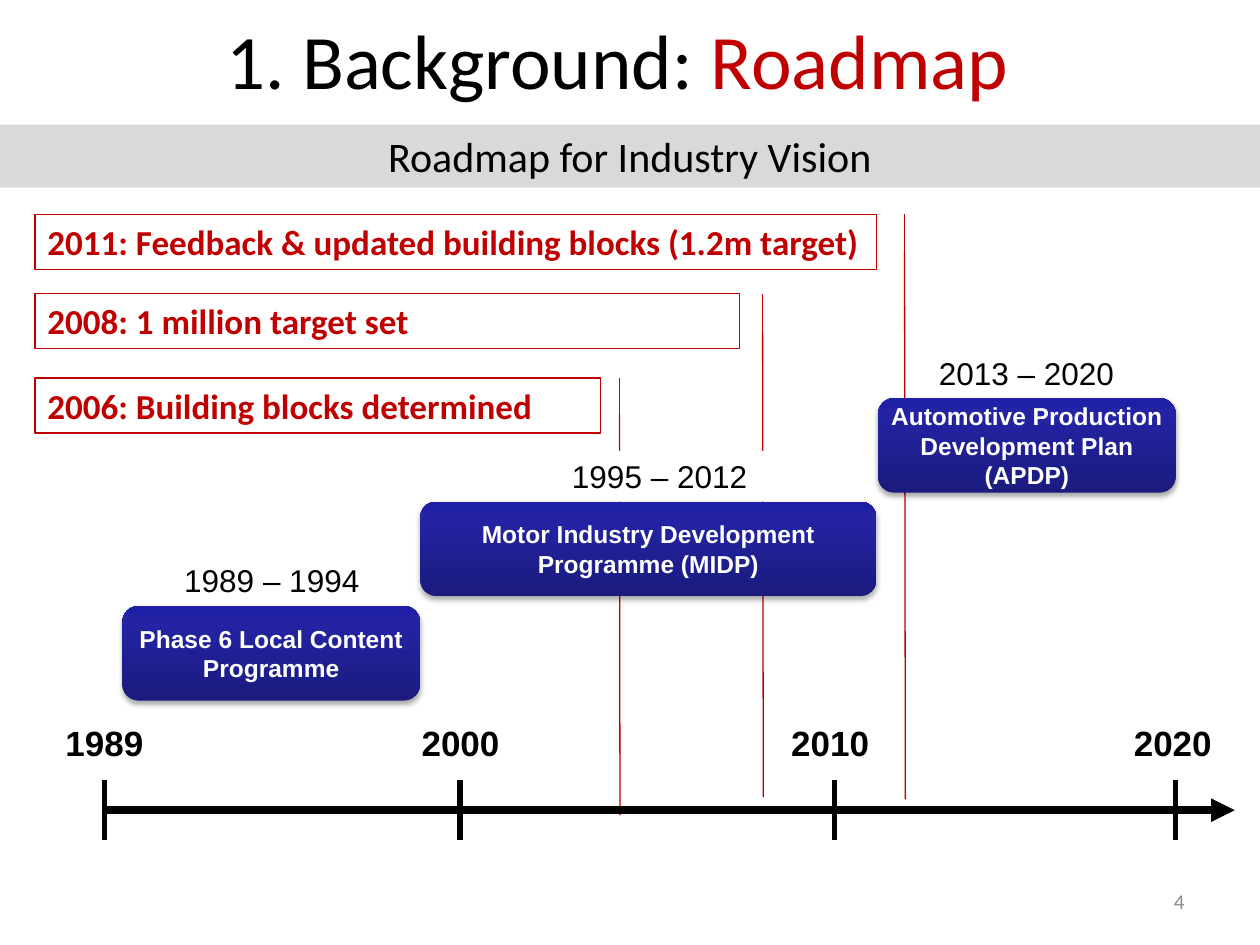
from copy import deepcopy

from lxml import etree
from pptx import Presentation
from pptx.dml.color import RGBColor
from pptx.enum import shapes, text
from pptx.oxml.ns import qn
from pptx.util import Pt

BLACK = RGBColor(0x00, 0x00, 0x00)
WHITE = RGBColor(0xFF, 0xFF, 0xFF)
RED = RGBColor(0xC0, 0x00, 0x00)
BAND = RGBColor(0xD9, 0xD9, 0xD9)
PAGE_GREY = RGBColor(0x8C, 0x8C, 0x8C)
BLUES = [(0, RGBColor(0x1B, 0x1B, 0x7E)), (0.8, RGBColor(0x23, 0x23, 0xA3)),
         (1, RGBColor(0x20, 0x20, 0xA6))]

SHAPE = shapes.MSO_SHAPE
LEFT, CENTER, RIGHT = text.PP_ALIGN.LEFT, text.PP_ALIGN.CENTER, text.PP_ALIGN.RIGHT
TOP, MIDDLE = text.MSO_ANCHOR.TOP, text.MSO_ANCHOR.MIDDLE


def write(sp, runs, size, font, align=LEFT, bold=False, anchor=TOP, wrap=True):
    """Fill a shape with one paragraph of (text, colour) runs."""
    tf = sp.text_frame
    tf.word_wrap = wrap
    tf.vertical_anchor = anchor
    p = tf.paragraphs[0]
    p.alignment = align
    for words, color in runs:
        r = p.add_run()
        r.text = words
        r.font.size, r.font.name, r.font.bold = Pt(size), font, bold
        r.font.color.rgb = color


def add_text(s, box, *args, **kwargs):
    write(s.shapes.add_textbox(*map(Pt, box)), *args, **kwargs)


def add_shape(s, kind, box, fill=None, line=None):
    sp = s.shapes.add_shape(kind, *map(Pt, box))
    sp.shadow.inherit = False
    if fill is None:
        sp.fill.background()
    else:
        sp.fill.solid()
        sp.fill.fore_color.rgb = fill
    if line is None:
        sp.line.fill.background()
    else:
        sp.line.color.rgb = line
        sp.line.width = Pt(0.75)
    return sp


def add_line(s, x1, y1, x2, y2, width):
    c = s.shapes.add_connector(shapes.MSO_CONNECTOR.STRAIGHT, Pt(x1), Pt(y1), Pt(x2), Pt(y2))
    c.line.color.rgb = BLACK
    c.line.width = Pt(width)
    etree.SubElement(c._element.spPr, qn("a:effectLst"))
    return c


def gloss(sp):
    """Give a box the three-stop blue gradient and a soft shadow below."""
    sp.fill.gradient()
    sp.fill.gradient_angle = 90
    stop_list = sp._element.spPr.find(".//" + qn("a:gsLst"))
    stop_list.append(deepcopy(stop_list[-1]))
    for stop, (position, color) in zip(sp.fill.gradient_stops, BLUES):
        stop.position = position
        stop.color.rgb = color
    effects = sp._element.spPr.find(qn("a:effectLst"))
    shadow = etree.SubElement(effects, qn("a:outerShdw"), blurRad=str(Pt(3.1)),
                              dist=str(Pt(1.8)), dir="5400000", rotWithShape="0")
    color = etree.SubElement(shadow, qn("a:srgbClr"), val="000000")
    etree.SubElement(color, qn("a:alpha"), val="35000")


def add_header(s, x, y, w):
    band = add_shape(s, SHAPE.RECTANGLE, (x, y + 71.3, w, 36), BAND)
    write(band, [("Roadmap for Industry Vision", BLACK)], 24, "Calibri", CENTER)
    add_text(s, (x + 33.8, y, 648, 67.7), [("1. Background: ", BLACK), ("Roadmap ", RED)],
             44, "Calibri", CENTER, anchor=MIDDLE)


def add_milestone(s, x, y, w, words, reach):
    """Callout whose leader drops to reach times its height."""
    sp = add_shape(s, SHAPE.LINE_CALLOUT_1_BORDER_AND_ACCENT_BAR, (x, y, w, 31.5), line=RED)
    for i, value in enumerate((0.673, 1.033, reach, 1.034)):
        sp.adjustments[i] = value
    write(sp, [(words, RED)], 20, "Calibri", bold=True)


def add_programme(s, x, y, w, period, name, label_dx):
    label = add_shape(s, SHAPE.RECTANGLE, (x + label_dx, y - 29, 124.6, 29), WHITE)
    write(label, [(period, BLACK)], 18, "Arial", CENTER)
    sp = add_shape(s, SHAPE.ROUNDED_RECTANGLE, (x, y, w, 54))
    gloss(sp)
    tf = sp.text_frame
    tf.margin_left = tf.margin_right = tf.margin_top = tf.margin_bottom = 0
    write(sp, [(name, WHITE)], 14, "Arial", CENTER, bold=True, anchor=MIDDLE)


def add_timeline(s, x, y, w, years):
    """Arrow along y; years holds (year, tick offset, label centre offset)."""
    arrow = add_line(s, x, y, x + w, y, 4.5)
    etree.SubElement(arrow.line._get_or_add_ln(), qn("a:tailEnd"), type="triangle")
    for year, tick, center in years:
        add_line(s, x + tick, y - 17, x + tick, y + 17, 3)
        add_text(s, (x + center - 29.5, y - 54.5, 59, 31.5), [(year, BLACK)],
                 20, "Arial", bold=True, wrap=False)


def main():
    prs = Presentation()
    prs.slide_width, prs.slide_height = Pt(720), Pt(540)
    s = prs.slides.add_slide(prs.slide_layouts[6])

    for y, w, words, reach in [
        (122.4, 481, "2011: Feedback & updated building blocks (1.2m target)", 10.619),
        (216, 323.3, "2006: Building blocks determined", 7.938),
        (167.8, 402.5, "2008: 1 million target set", 9.137),
    ]:
        add_milestone(s, 20, y, w, words, reach)

    add_timeline(s, 59.8, 463, 645.8, [
        ("1989", 0, 0), ("2000", 203, 203.5), ("2010", 417, 414.7), ("2020", 612, 610.5)])
    add_header(s, 0, 0, 720)

    for x, y, w, period, name, label_dx in [
        (70, 346.3, 170, "1989 – 1994", "Phase 6 Local Content Programme", 23),
        (240.2, 286.6, 260.6, "1995 – 2012", "Motor Industry Development Programme (MIDP)", 74.4),
        (501.8, 227.5, 170, "2013 – 2020", "Automotive Production Development Plan (APDP)", 22.4),
    ]:
        add_programme(s, x, y, w, period, name, label_dx)

    add_text(s, (516, 500.5, 168, 28.8), [("4", PAGE_GREY)], 12, "Calibri", RIGHT, anchor=MIDDLE)
    prs.save("out.pptx")


if __name__ == "__main__":
    main()
